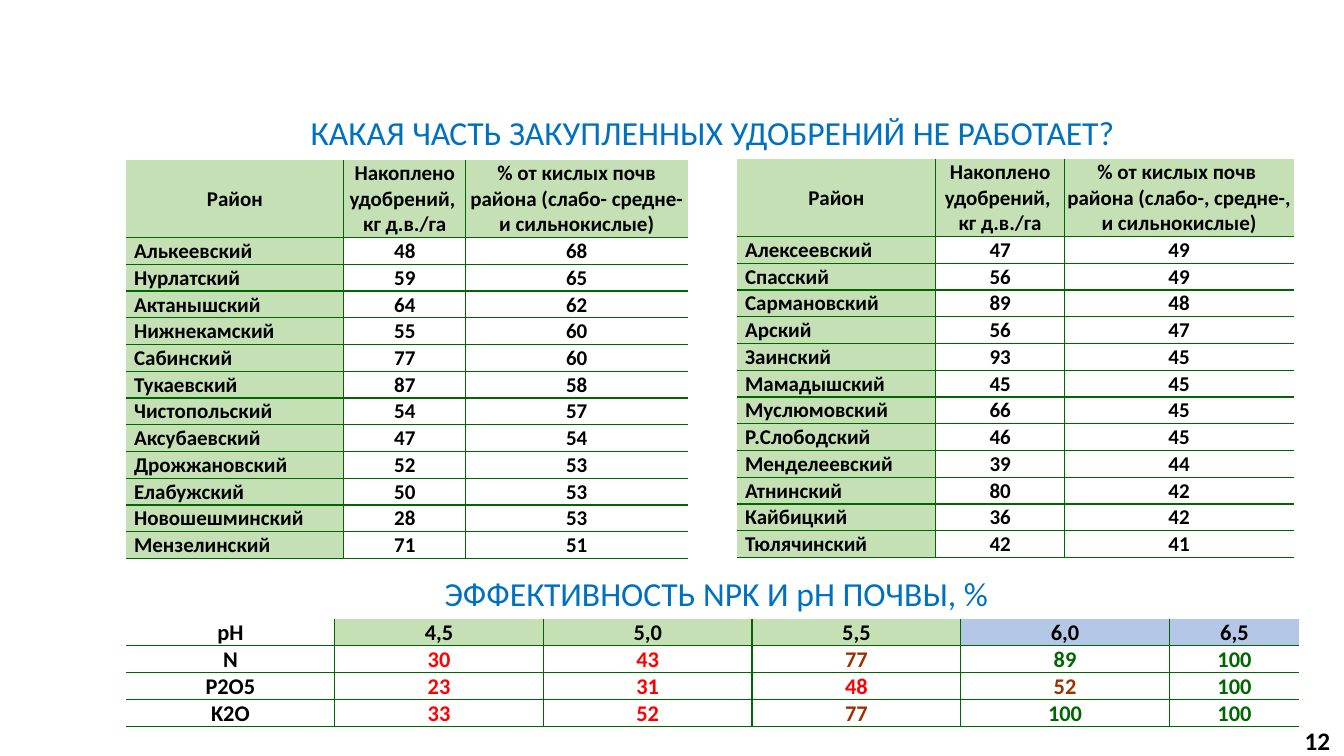
from lxml.etree import SubElement
from pptx import Presentation
from pptx.dml.color import RGBColor
from pptx.enum.shapes import MSO_SHAPE
from pptx.enum.text import MSO_ANCHOR, PP_ALIGN
from pptx.oxml.ns import qn
from pptx.util import Inches, Pt

BLACK = RGBColor(0x00, 0x00, 0x00)
BLUE = RGBColor(0x00, 0x70, 0xC0)
RED = RGBColor(0xFF, 0x00, 0x00)
BROWN = RGBColor(0x99, 0x33, 0x00)
GREEN = RGBColor(0x00, 0x66, 0x00)
PALE_GREEN = RGBColor(0xC5, 0xE0, 0xB4)
PALE_BLUE = RGBColor(0xB4, 0xC7, 0xE7)

PLAIN_TABLE_STYLE = "{2D5ABB26-0587-4C30-8999-92F81FD0307C}"

LEFT_DISTRICTS = [
    ("Район", "Накоплено удобрений, \nкг д.в./га",
     "% от кислых почв района (слабо- средне- и сильнокислые)"),
    ("Алькеевский", 48, 68),
    ("Нурлатский", 59, 65),
    ("Актанышский", 64, 62),
    ("Нижнекамский", 55, 60),
    ("Сабинский", 77, 60),
    ("Тукаевский", 87, 58),
    ("Чистопольский", 54, 57),
    ("Аксубаевский", 47, 54),
    ("Дрожжановский", 52, 53),
    ("Елабужский", 50, 53),
    ("Новошешминский", 28, 53),
    ("Мензелинский", 71, 51),
]
RIGHT_DISTRICTS = [
    ("Район", "Накоплено удобрений, \nкг д.в./га",
     "% от кислых почв \nрайона (слабо-, средне-, и сильнокислые)"),
    ("Алексеевский", 47, 49),
    ("Спасский", 56, 49),
    ("Сармановский", 89, 48),
    ("Арский", 56, 47),
    ("Заинский", 93, 45),
    ("Мамадышский", 45, 45),
    ("Муслюмовский", 66, 45),
    ("Р.Слободский", 46, 45),
    ("Менделеевский", 39, 44),
    ("Атнинский", 80, 42),
    ("Кайбицкий", 36, 42),
    ("Тюлячинский", 42, 41),
]
EFFICIENCY = [
    ("pH", "4,5", "5,0", "5,5", "6,0", "6,5"),
    ("N", 30, 43, 77, 89, 100),
    ("P2O5", 23, 31, 48, 52, 100),
    ("K2O", 33, 52, 77, 100, 100),
]
EFFICIENCY_COLORS = [
    [BLACK] * 6,
    [BLACK, RED, RED, BROWN, GREEN, GREEN],
    [BLACK, RED, RED, RED, BROWN, GREEN],
    [BLACK, RED, RED, BROWN, GREEN, GREEN],
]
EFFICIENCY_FILLS = [None] + [PALE_GREEN] * 3 + [PALE_BLUE] * 2


class FertilizerSlide:
    """Draws headings, tables and the page number on one slide."""

    def __init__(self, page, font_name="Calibri"):
        self.page = page
        self.font_name = font_name

    def set_text(self, frame, text, size, color=BLACK, bold=True, align=PP_ALIGN.CENTER):
        frame.text = text
        for paragraph in frame.paragraphs:
            paragraph.alignment = align
            font = paragraph.font
            font.name = self.font_name
            font.size = Pt(size)
            font.bold = bold
            font.color.rgb = color

    def heading(self, top, text):
        box = self.page.shapes.add_textbox(Inches(0.88), Inches(top), Inches(12.45), Inches(0.5))
        box.text_frame.word_wrap = True
        self.set_text(box.text_frame, text, 24, BLUE, bold=False)

    def page_number(self, text):
        box = self.page.shapes.add_shape(
            MSO_SHAPE.ROUNDED_RECTANGLE, Inches(12.84), Inches(7.2), Inches(0.45), Inches(0.3))
        box.adjustments[0] = 0
        box.shadow.inherit = False
        box.fill.background()
        box.line.fill.background()
        frame = box.text_frame
        frame.margin_left = frame.margin_right = 0
        frame.vertical_anchor = MSO_ANCHOR.MIDDLE
        self.set_text(frame, text, 18)

    def table(self, left, top, widths, heights):
        frame = self.page.shapes.add_table(
            len(heights), len(widths), Inches(left), Inches(top),
            Inches(sum(widths)), Inches(sum(heights)))
        table = frame.table
        table._tbl.tblPr.find(qn("a:tableStyleId")).text = PLAIN_TABLE_STYLE
        table.first_row = table.horz_banding = False
        for column, width in zip(table.columns, widths):
            column.width = Inches(width)
        for row, height in zip(table.rows, heights):
            row.height = Inches(height)
        return table

    def borders(self, cell, sides):
        properties = cell._tc.get_or_add_tcPr()
        for side in sides:
            line = SubElement(properties, qn(f"a:ln{side}"), w=str(Pt(1)))
            solid = SubElement(line, qn("a:solidFill"))
            SubElement(solid, qn("a:srgbClr"), val=str(GREEN))

    def cell(self, table, row, column, text, size, fill=None, color=BLACK,
             align=PP_ALIGN.CENTER, margins=(0, 0, 0)):
        cell = table.cell(row, column)
        inner_sides = [("L", column > 0), ("R", column < len(table.columns) - 1),
                       ("T", row > 0), ("B", True)]
        self.borders(cell, [side for side, shown in inner_sides if shown])
        if fill is None:
            cell.fill.background()
        else:
            cell.fill.solid()
            cell.fill.fore_color.rgb = fill
        cell.margin_left, cell.margin_top, cell.margin_right = map(Inches, margins)
        cell.margin_bottom = 0
        cell.vertical_anchor = MSO_ANCHOR.MIDDLE
        self.set_text(cell.text_frame, str(text), size, color, align=align)

    def district_table(self, left, top, widths, records):
        body_rows = len(records) - 1
        table = self.table(left, top, widths, [0.76] + [3.18 / body_rows] * body_rows)
        for row, record in enumerate(records):
            for column, text in enumerate(record):
                is_name = row > 0 and column == 0
                self.cell(
                    table, row, column, text, 15,
                    fill=PALE_GREEN if row == 0 or column == 0 else None,
                    align=PP_ALIGN.LEFT if is_name else PP_ALIGN.CENTER,
                    margins=(0.08 if is_name else 0.01, 0.01 if row else 0, 0.01))

    def efficiency_table(self, left, top, widths):
        table = self.table(left, top, widths, [1.07 / len(EFFICIENCY)] * len(EFFICIENCY))
        for row, (record, colors) in enumerate(zip(EFFICIENCY, EFFICIENCY_COLORS)):
            for column, (text, color) in enumerate(zip(record, colors)):
                fill = EFFICIENCY_FILLS[column] if row == 0 else None
                self.cell(table, row, column, text, 16, fill, color)


def main():
    deck = Presentation()
    deck.slide_width = Inches(13.33)
    deck.slide_height = Inches(7.5)
    slide = FertilizerSlide(deck.slides.add_slide(deck.slide_layouts[6]))
    slide.page_number("12")
    slide.district_table(1.25, 1.59, [2.16, 1.21, 2.2], LEFT_DISTRICTS)
    slide.district_table(7.31, 1.58, [1.97, 1.28, 2.27], RIGHT_DISTRICTS)
    slide.heading(1.06, "КАКАЯ ЧАСТЬ ЗАКУПЛЕННЫХ УДОБРЕНИЙ НЕ РАБОТАЕТ? ")
    slide.heading(5.63, "ЭФФЕКТИВНОСТЬ NPK И pH ПОЧВЫ, %")
    slide.efficiency_table(1.25, 6.14, [2.07] * 5 + [1.29])
    deck.save("out.pptx")


if __name__ == "__main__":
    main()
